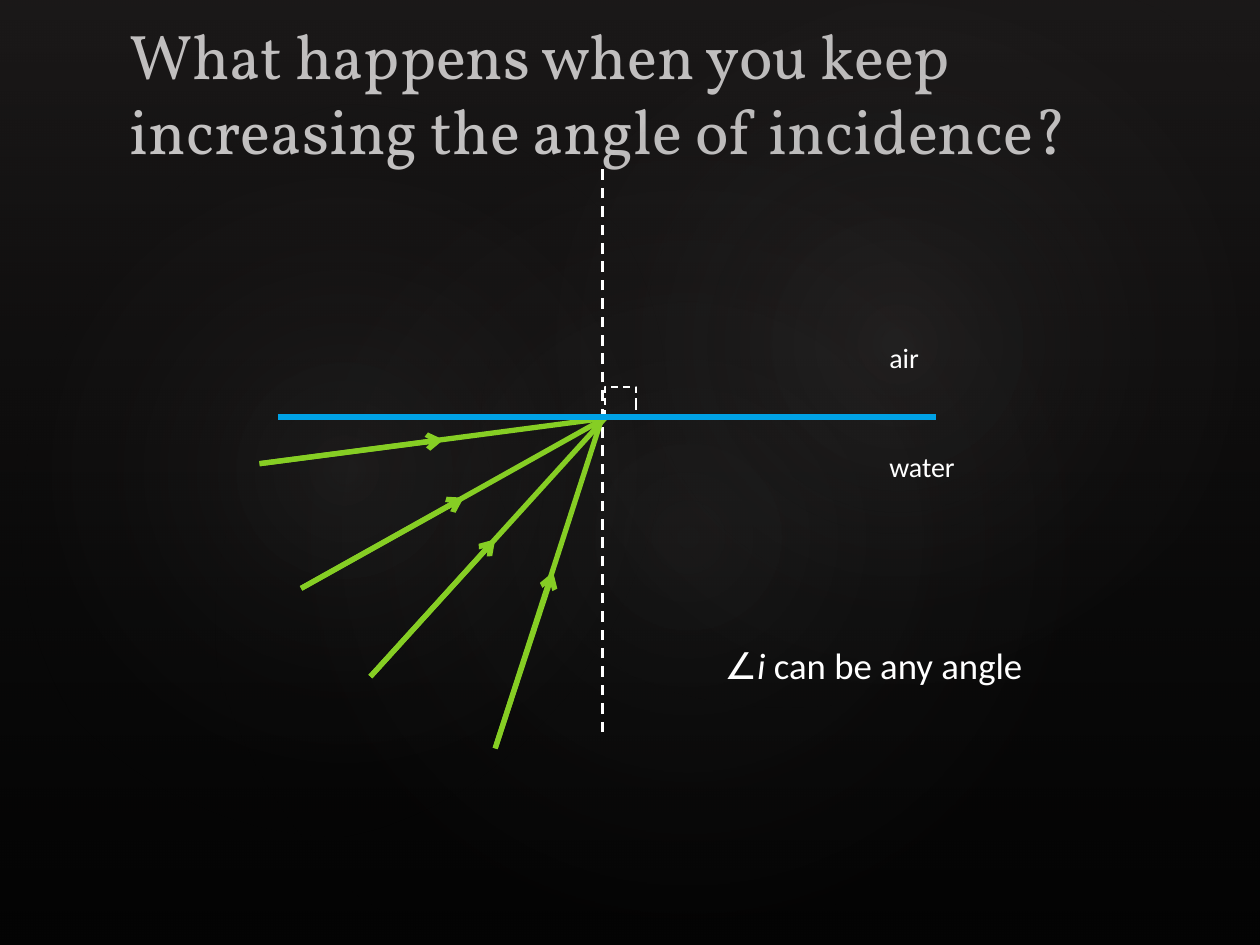
import pptx
import pptx.util
import pptx.dml.color
import pptx.enum.dml
import pptx.enum.shapes
import pptx.enum.text
import pptx.oxml
import pptx.oxml.ns
from lxml import etree

WIDTH, HEIGHT = 10, 7.5
WHITE, GREEN, BLUE = "FFFFFF", "86CE24", "00A2E6"
SHAPES = pptx.enum.shapes.MSO_SHAPE
ANCHORS = pptx.enum.text.MSO_ANCHOR
DASH = pptx.enum.dml.MSO_LINE.DASH
STRAIGHT = pptx.enum.shapes.MSO_CONNECTOR.STRAIGHT
LINEAR = '<a:lin ang="5400000" scaled="0"/>'
RADIAL = ('<a:path path="circle"><a:fillToRect l="50000" t="50000" '
          'r="50000" b="50000"/></a:path>')


def colour(value):
    """Turn a hex string into a colour."""
    return pptx.dml.color.RGBColor.from_string(value)


def inches(values):
    """Turn numbers into lengths."""
    return [pptx.util.Inches(value) for value in values]


def assign(target, values):
    """Set each attribute named in a dict."""
    for name, value in values.items():
        setattr(target, name, value)


def style_line(line, value, width, dash=None):
    """Colour a line, set its width and its dashes."""
    line.color.rgb = colour(value)
    assign(line, {"width": pptx.util.Pt(width), "dash_style": dash})


def add_gradient(page, kind, box, stops, direction, angle=0):
    """Place a borderless shape with a translucent gradient."""
    shape = page.shapes.add_shape(kind, *inches(box))
    assign(shape, {"rotation": angle})
    shape.shadow.inherit = False
    shape.line.fill.background()
    stop_list = "".join(
        f'<a:gs pos="{place * 1000}"><a:srgbClr val="{value}">'
        f'<a:alpha val="{opacity * 1000}"/></a:srgbClr></a:gs>'
        for place, value, opacity in stops)
    gradient = pptx.oxml.parse_xml(
        f'<a:gradFill {pptx.oxml.ns.nsdecls("a")} rotWithShape="1">'
        f'<a:gsLst>{stop_list}</a:gsLst>{direction}</a:gradFill>')
    shape.element.spPr.find(pptx.oxml.ns.qn("a:prstGeom")).addnext(gradient)


def add_backdrop(page, box):
    """Fill the page with black, a vertical shade and three soft glows."""
    page.background.fill.solid()
    page.background.fill.fore_color.rgb = colour("000000")
    add_gradient(page, SHAPES.RECTANGLE, box,
                 [(0, "4B4545", 36), (100, "282828", 10)], LINEAR)
    glows = [((1.5, 1.14, 7.92, 6.24), 328.7, 7),
             ((-0.3, 1.28, 6.06, 4.9), 294.3, 8),
             ((3.58, 0.13, 7.09, 5.2), 328.7, 8)]
    for glow_box, angle, opacity in glows:
        add_gradient(page, SHAPES.OVAL, glow_box,
                     [(0, "BFB9B9", opacity), (58, "282828", 0)], RADIAL, angle)


def add_line(shapes, start, end, value, width, dash=None, arrow=False):
    """Draw a straight line, with an open arrowhead at its end on request."""
    connector = shapes.add_connector(STRAIGHT, *inches((*start, *end)))
    style_line(connector.line, value, width, dash)
    properties = connector.element.spPr
    if arrow:
        etree.SubElement(properties.find(pptx.oxml.ns.qn("a:ln")),
                         pptx.oxml.ns.qn("a:tailEnd"), type="arrow")
    etree.SubElement(properties, pptx.oxml.ns.qn("a:effectLst"))


def add_ray(page, start, middle, end):
    """Group a full ray with the arrow that shows its direction."""
    group = page.shapes.add_group_shape()
    add_line(group.shapes, start, end, GREEN, 3)
    add_line(group.shapes, start, middle, GREEN, 3, arrow=True)


def write_spans(para, spans, size, face):
    """Write runs of text, each upright or italic."""
    for text, italic in spans:
        span = para.add_run()
        span.text = text
        assign(span.font, {"name": face, "size": pptx.util.Pt(size),
                           "italic": italic})
        span.font.color.rgb = colour(WHITE)


def add_title(page, box, text):
    """Move the title placeholder and write in it."""
    title = page.shapes.title
    assign(title, dict(zip(("left", "top", "width", "height"), inches(box))))
    assign(title.text_frame, {
        "word_wrap": True, "vertical_anchor": ANCHORS.BOTTOM,
        "auto_size": pptx.enum.text.MSO_AUTO_SIZE.NONE})
    para = title.text_frame.paragraphs[0]
    para.alignment = pptx.enum.text.PP_ALIGN.LEFT
    write_spans(para, [(text, None)], 36, "Vollkorn")


def add_label(page, box, spans, size, wrap=True):
    """Place a text box that fits its text."""
    label = page.shapes.add_textbox(*inches(box))
    assign(label.text_frame, {
        "word_wrap": wrap,
        "auto_size": pptx.enum.text.MSO_AUTO_SIZE.SHAPE_TO_FIT_TEXT})
    write_spans(label.text_frame.paragraphs[0], spans, size, "Calibri")


def add_right_angle(page, box):
    """Mark the right angle with a dashed square."""
    mark = page.shapes.add_shape(SHAPES.RECTANGLE, *inches(box))
    mark.rotation = 270
    mark.shadow.inherit = False
    mark.fill.background()
    style_line(mark.line, WHITE, 1, DASH)


def add_diagram(page, box):
    """Draw the normal, the rays and the water surface in a box."""
    left, top, width, height = box
    right, bottom = left + width, top + height
    normal, surface = 4.78, 3.31
    add_right_angle(page, (4.8, 3.07, 0.25, 0.25))
    add_line(page.shapes, (normal, bottom), (normal, top), WHITE, 1.5, DASH)
    rays = [((3.93, 5.94), (4.39, 4.54), (normal, surface)),
            ((2.94, 5.37), (3.93, 4.28), (4.8, 3.32)),
            ((2.39, 4.67), (3.68, 3.95), (4.8, 3.32)),
            ((2.06, 3.68), (3.52, 3.49), (4.8, 3.32))]
    for start, middle, end in rays:
        add_ray(page, start, middle, end)
    add_line(page.shapes, (left, surface), (right, surface), BLUE, 3)
    add_label(page, (6.96, 3.52, 0.94, 0.37), [("water", None)], 16)
    add_label(page, (6.96, 2.65, 0.44, 0.37), [("air", None)], 16, False)


def main():
    """Build the slide and save it."""
    deck = pptx.Presentation()
    assign(deck, dict(zip(("slide_width", "slide_height"),
                          inches((WIDTH, HEIGHT)))))
    page = deck.slides.add_slide(deck.slide_layouts[5])
    add_backdrop(page, (0, 0, WIDTH, HEIGHT))
    add_title(page, (0.93, 0.68, 8.25, 0.7),
              "What happens when you keep increasing the angle of incidence?")
    add_diagram(page, (2.21, 1.32, 5.22, 4.49))
    add_label(page, (5.65, 5.05, 3.34, 0.45),
              [("∠", None), ("i ", True), ("can be any angle", False)], 21)
    deck.save("out.pptx")


if __name__ == "__main__":
    main()
